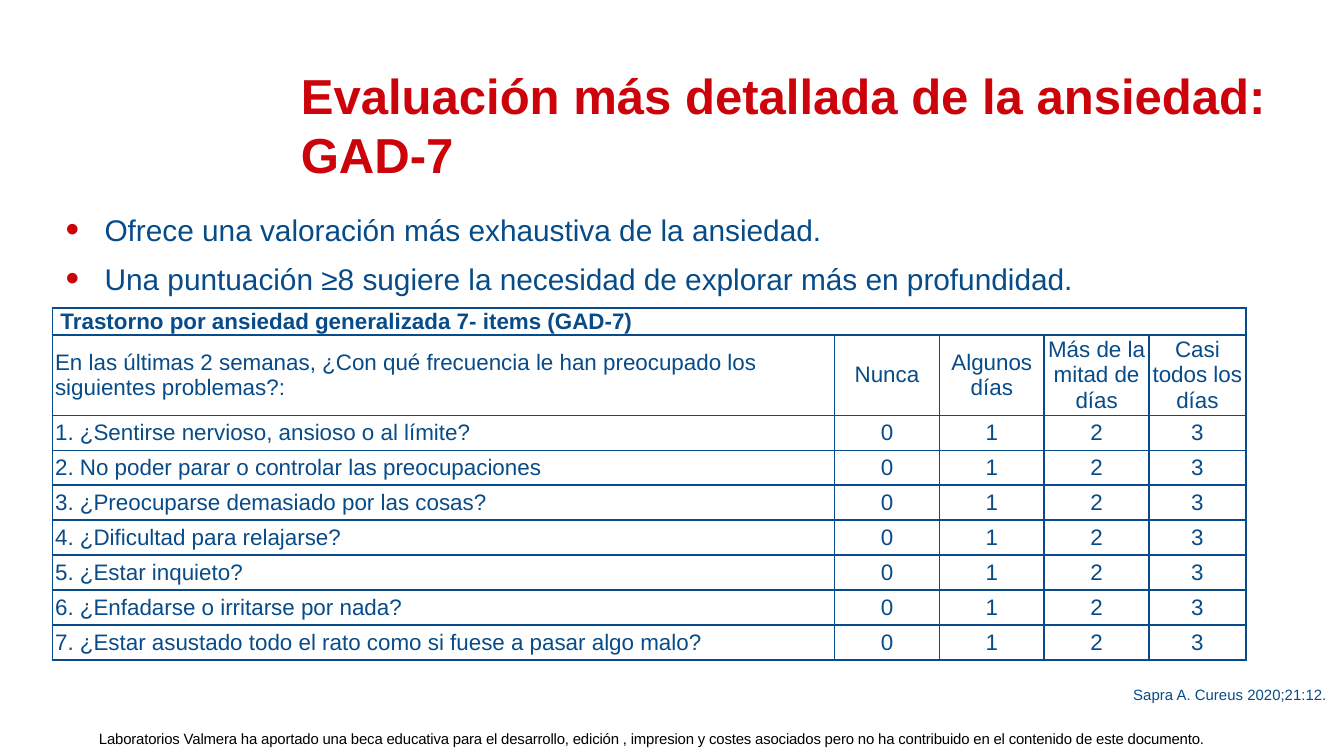
from lxml.etree import SubElement
from pptx import Presentation
from pptx.dml.color import RGBColor
from pptx.enum.text import MSO_ANCHOR as Anchor, PP_ALIGN as Align
from pptx.oxml.ns import qn
from pptx.util import Inches, Pt

# Content
TITLE = "Evaluación más detallada de la ansiedad: GAD-7"
POINTS = [
    "Ofrece una valoración más exhaustiva de la ansiedad.",
    "Una puntuación ≥8 sugiere la necesidad de explorar más en profundidad.",
]
SCALE_NAME = "Trastorno por ansiedad generalizada 7- items (GAD-7)"
HEADINGS = [
    "En las últimas 2 semanas, ¿Con qué frecuencia le han preocupado los "
    "siguientes problemas?:",
    "Nunca", "Algunos días", "Más de la mitad de días", "Casi todos los días",
]
QUESTIONS = [
    "1. ¿Sentirse nervioso, ansioso o al límite?",
    "2. No poder parar o controlar las preocupaciones",
    "3. ¿Preocuparse demasiado por las cosas?",
    "4. ¿Dificultad para relajarse?",
    "5. ¿Estar inquieto?",
    "6. ¿Enfadarse o irritarse por nada?",
    "7. ¿Estar asustado todo el rato como si fuese a pasar algo malo?",
]
SCORES = ["0", "1", "2", "3"]
CITATION = "Sapra A. Cureus 2020;21:12."
FUNDING = ("Laboratorios Valmera ha aportado una beca educativa para el desarrollo, "
           "edición , impresion y costes asociados pero no ha contribuido en el "
           "contenido de este documento.")

# Style and grid
FONT, BLUE, RED, BLACK = "Arial", "074B88", "CC030B", "000000"
LEFT = 0.39
COLUMNS = [5.82, 0.78, 0.78, 0.78, 0.72]
ROWS = [0.19, 0.53] + [0.26] * len(QUESTIONS)


def rgb(hex_color):
    return RGBColor.from_string(hex_color)


def style(paragraph, size, color=BLUE, bold=False, align=Align.LEFT):
    paragraph.alignment = align
    font = paragraph.font
    font.name, font.size, font.bold = FONT, Pt(size), bold
    font.color.rgb = rgb(color)


def add_frame(slide, left, top, width, height):
    frame = slide.shapes.add_textbox(
        Inches(left), Inches(top), Inches(width), Inches(height)).text_frame
    frame.word_wrap = True
    return frame


def add_bullet(paragraph):
    props = paragraph._p.get_or_add_pPr()
    props.set("marL", str(Inches(0.29)))
    props.set("indent", str(-Inches(0.29)))
    color = SubElement(props, qn("a:buClr"))
    SubElement(color, qn("a:srgbClr"), val=RED)
    SubElement(props, qn("a:buSzPct"), val="130000")
    SubElement(props, qn("a:buFont"), typeface=FONT)
    SubElement(props, qn("a:buChar"), char="•")


def format_cell(cell):
    cell.vertical_anchor = Anchor.MIDDLE
    cell.margin_left = cell.margin_right = Inches(0.02)
    cell.margin_top = cell.margin_bottom = 0
    props = cell._tc.get_or_add_tcPr()
    for side in ("lnL", "lnR", "lnT", "lnB"):
        line = SubElement(props, qn(f"a:{side}"), w=str(Pt(1)))
        fill = SubElement(line, qn("a:solidFill"))
        SubElement(fill, qn("a:srgbClr"), val=BLUE)
    cell.fill.background()


# Widescreen slide, 16:9
prs = Presentation()
prs.slide_width = Inches(10)
prs.slide_height = prs.slide_width * 9 // 16
slide = prs.slides.add_slide(prs.slide_layouts[6])

# Funding note
funding = add_frame(slide, 0.45, 5.4, 8.8, 0.2)
funding.margin_left = funding.margin_right = funding.margin_bottom = 0
funding.margin_top = Inches(0.03)
note = funding.paragraphs[0]
note.text = FUNDING
style(note, 8, BLACK, align=Align.CENTER)
note.runs[0].font._element.set("spc", "-10")

# Title
title = add_frame(slide, 2.14, 0.44, 7.86, 0.62).paragraphs[0]
title.text = TITLE
style(title, 26.3, RED, bold=True)

# Key points
body = add_frame(slide, LEFT, 1.47, 8.5, 0.8)
for i, text in enumerate(POINTS):
    point = body.add_paragraph() if i else body.paragraphs[0]
    point.text = text
    point.line_spacing = 1.2
    point.space_before = Pt(3.2 if i else 0)
    add_bullet(point)
    style(point, 16)

# Questionnaire
table = slide.shapes.add_table(
    len(ROWS), len(COLUMNS), Inches(LEFT), Inches(2.29),
    Inches(sum(COLUMNS)), Inches(sum(ROWS))).table
table.first_row = table.horz_banding = False
for column, width in zip(table.columns, COLUMNS):
    column.width = Inches(width)
for row, height in zip(table.rows, ROWS):
    row.height = Inches(height)

lines = [[SCALE_NAME] + [""] * len(SCORES), HEADINGS]
lines += [[question] + SCORES for question in QUESTIONS]
for r, texts in enumerate(lines):
    for c, text in enumerate(texts):
        cell = table.cell(r, c)
        format_cell(cell)
        cell.text = text
        style(cell.text_frame.paragraphs[0], 12, bold=r == 0,
              align=Align.CENTER if c else Align.LEFT)
scale_cell = table.cell(0, 0)
scale_cell.merge(table.cell(0, len(COLUMNS) - 1))
scale_cell.margin_left = Inches(0.06)

# Citation
citation = add_frame(slide, 3.12, 5.05, 6.85, 0.24).paragraphs[0]
citation.text = CITATION
style(citation, 8, align=Align.RIGHT)

prs.save("out.pptx")
